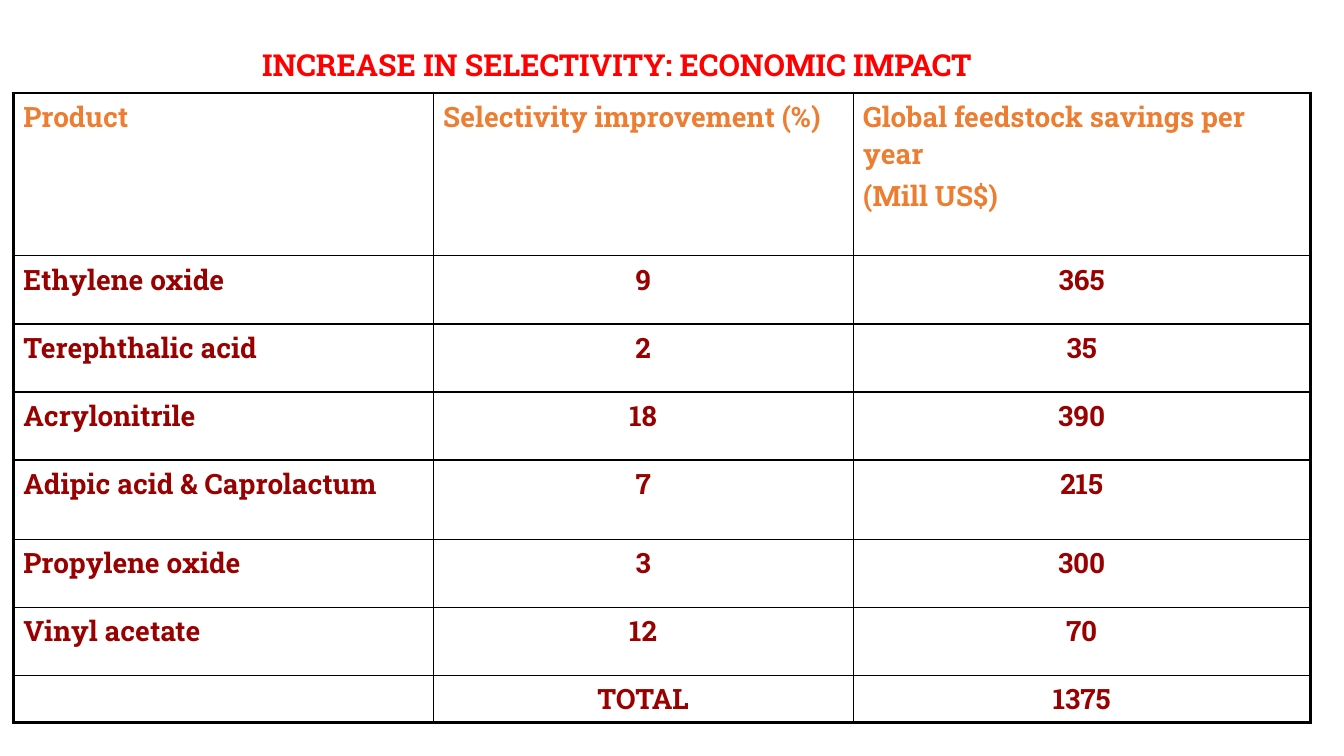
import pptx
import pptx.util
import pptx.dml.color
import pptx.enum.text
import pptx.oxml
import pptx.oxml.ns

Pt = pptx.util.Pt
ALIGN = pptx.enum.text.PP_ALIGN

COLORS = {"title": "FF0000", "header": "ED7D31", "body": "990000", "border": "000000"}

HEADERS = [
    "Product",
    "Selectivity improvement (%)",
    "Global feedstock savings per year\n(Mill US$)",
]
PRODUCTS = [
    ("Ethylene oxide", "9", "365"),
    ("Terephthalic acid", "2", "35"),
    ("Acrylonitrile", "18", "390"),
    ("Adipic acid & Caprolactum", "7", "215"),
    ("Propylene oxide", "3", "300"),
    ("Vinyl acetate", "12", "70"),
    ("", "TOTAL", "1375"),
]
COLUMN_WIDTHS = [300, 300, 326.5]
ROW_HEIGHTS = [116.4, 48.6, 48.6, 48.6, 56.8, 48.6, 48.6, 33.8]


class SlideBuilder:
    font_name = "Roboto Slab"
    outer_width, inner_width = 2.25, 1

    def __init__(self, deck):
        self.page = deck.slides.add_slide(deck.slide_layouts[5])

    def style(self, para, size, color, align=ALIGN.LEFT):
        para.alignment = align
        para.font.name = self.font_name
        para.font.size = Pt(size)
        para.font.bold = True
        para.font.color.rgb = pptx.dml.color.RGBColor.from_string(COLORS[color])

    def title(self, text, left, top, width, height):
        box = self.page.shapes.title
        box.left, box.top, box.width, box.height = map(Pt, (left, top, width, height))
        frame = box.text_frame
        frame.text = text
        frame.auto_size = pptx.enum.text.MSO_AUTO_SIZE.NONE
        frame.vertical_anchor = pptx.enum.text.MSO_ANCHOR.MIDDLE
        para = frame.paragraphs[0]
        para.line_spacing = 0.9
        self.style(para, 21.6, "title")

    def borders(self, cell, outer_sides):
        """Draw all four cell edges, heavier on the sides at the table's rim."""
        properties = cell._tc.get_or_add_tcPr()
        for position, side in enumerate("LRTB"):
            width = self.outer_width if side in outer_sides else self.inner_width
            line = pptx.oxml.parse_xml(
                f'<a:ln{side} {pptx.oxml.ns.nsdecls("a")} w="{int(Pt(width))}">'
                f'<a:solidFill><a:srgbClr val="{COLORS["border"]}"/></a:solidFill>'
                f'</a:ln{side}>'
            )
            properties.insert(position, line)

    def table(self, rows, left, top, widths, heights):
        table = self.page.shapes.add_table(
            len(rows), len(widths), Pt(left), Pt(top), Pt(sum(widths)), Pt(sum(heights))
        ).table
        table.first_row = table.horz_banding = False
        for column, width in zip(table.columns, widths):
            column.width = Pt(width)
        for row, height in zip(table.rows, heights):
            row.height = Pt(height)
        last_row, last_column = len(rows) - 1, len(widths) - 1
        for r, values in enumerate(rows):
            for c, text in enumerate(values):
                cell = table.cell(r, c)
                cell.fill.background()
                cell.text = text
                color = "body" if r else "header"
                align = ALIGN.CENTER if r and c else ALIGN.LEFT
                for para in cell.text_frame.paragraphs:
                    para.space_before = Pt(4)
                    self.style(para, 20, color, align)
                rim = {"L": c == 0, "R": c == last_column, "T": r == 0, "B": r == last_row}
                self.borders(cell, [side for side, on_rim in rim.items() if on_rim])


def main():
    deck = pptx.Presentation()
    deck.slide_width, deck.slide_height = Pt(960), Pt(540)
    slide = SlideBuilder(deck)
    slide.title("INCREASE IN SELECTIVITY: ECONOMIC IMPACT", 180, 36, 636, 24)
    slide.table([HEADERS, *PRODUCTS], 9.4, 66.4, COLUMN_WIDTHS, ROW_HEIGHTS)
    deck.save("out.pptx")


if __name__ == "__main__":
    main()
